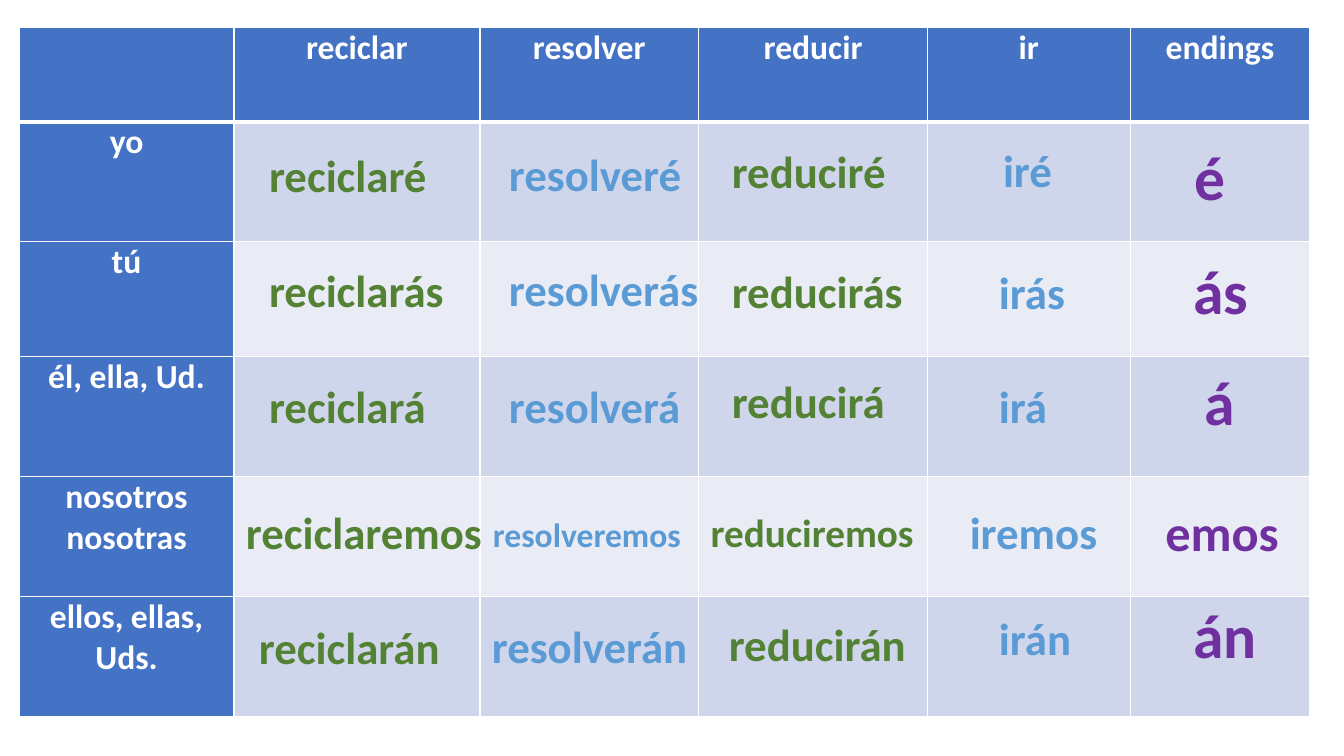
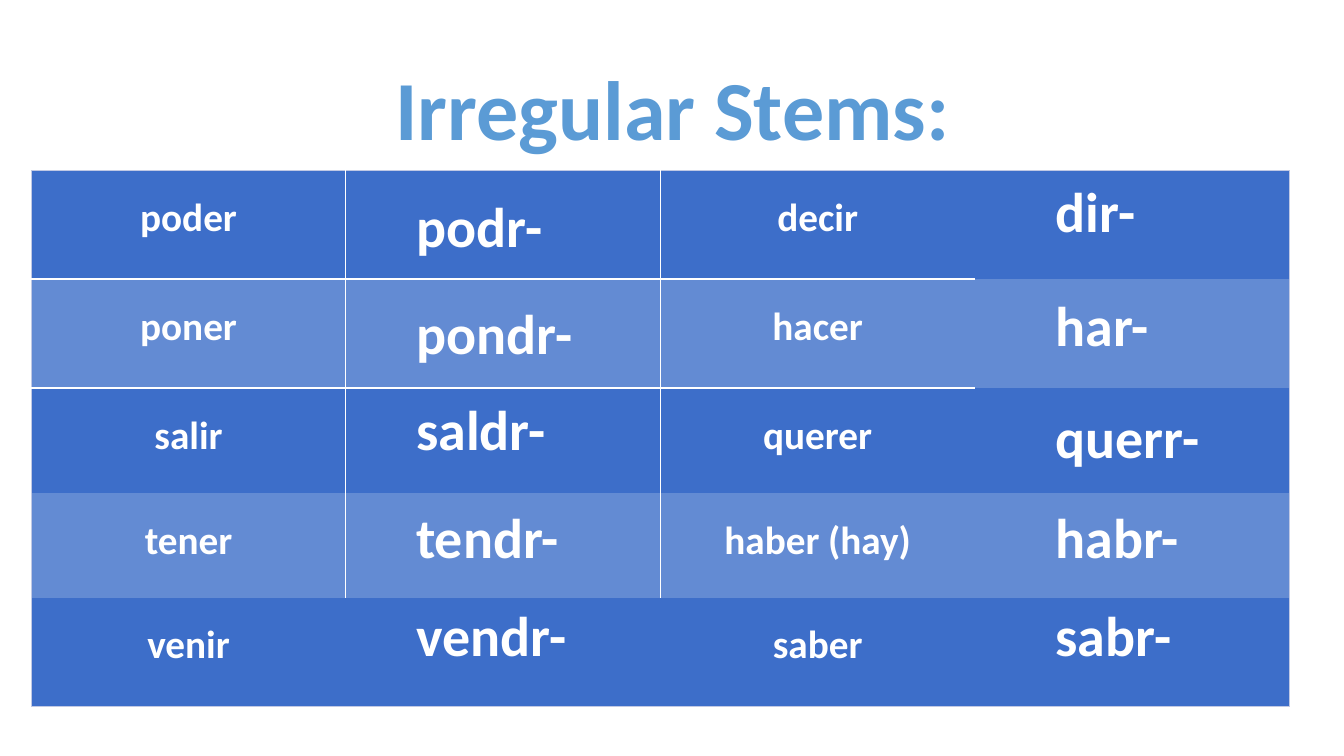
from lxml.etree import SubElement as Sub
from pptx import Presentation
from pptx.dml.color import RGBColor
from pptx.enum.text import MSO_AUTO_SIZE as Fit, MSO_ANCHOR as Anchor, PP_ALIGN as Align
from pptx.oxml.ns import qn
from pptx.util import Inches, Pt

# Shared look
FONT = "Calibri"
WHITE, BLUE, SKY = "FFFFFF", "4472C4", "5B9BD5"
GREEN, PURPLE = "548235", "7030A0"
PALE, LIGHT = "E9EBF5", "CFD5EA"
DEEP, MID, RIM = "3D6EC9", "638BD3", "C1C9E4"
PLAIN = "{2D5ABB26-0587-4C30-8999-92F81FD0307C}"  # table style without grid

# Slide 1: each verb column is colour, box width, (word, left, top, size)
HEADS = ["", "reciclar", "resolver", "reducir", "ir", "endings"]
PEOPLE = ["yo", "tú", "él, ella, Ud.", "nosotros\nnosotras", "ellos, ellas, Uds."]
FORMS = [
    (GREEN, 4, [("reciclaré", 2.57, 1.42, 32), ("reciclarás", 2.57, 2.56, 32),
                ("reciclará", 2.57, 3.71, 32), ("reciclaremos", 2.34, 4.96, 32),
                ("reciclarán", 2.47, 6.1, 32)]),
    (SKY, 4, [("resolveré", 4.95, 1.41, 32), ("resolverás", 4.95, 2.55, 32),
              ("resolverá", 4.95, 3.71, 32), ("resolveremos", 4.79, 5.05, 24),
              ("resolverán", 4.78, 6.09, 32)]),
    (GREEN, 4, [("reduciré", 7.16, 1.38, 32), ("reducirás", 7.16, 2.57, 32),
                ("reducirá", 7.16, 3.66, 32), ("reduciremos", 6.95, 4.99, 28),
                ("reducirán", 7.13, 6.07, 32)]),
    (SKY, 1.94, [("iré", 9.85, 1.37, 32), ("irás", 9.81, 2.58, 32),
                 ("irá", 9.81, 3.71, 32), ("iremos", 9.52, 4.96, 32),
                 ("irán", 9.81, 6.01, 32)]),
    (PURPLE, 1.4, [("é", 11.75, 1.33, 44), ("ás", 11.74, 2.46, 44),
                   ("á", 11.85, 3.56, 44), ("emos", 11.46, 4.92, 36),
                   ("án", 11.74, 5.87, 44)]),
]

# Slide 2: verbs in the table, stems as (word, top) at a shared left
VERBS = [("poder", "decir"), ("poner", "hacer"), ("salir", "querer"),
         ("tener", "haber (hay)"), ("venir", "saber")]
STEMS = [
    (4.03, [("podr-", 1.85), ("pondr-", 2.91), ("saldr-", 3.86),
            ("tendr-", 4.94), ("vendr-", 5.91)]),
    (10.37, [("dir-", 1.7), ("har-", 2.83), ("querr-", 3.94),
             ("habr-", 4.94), ("sabr-", 5.91)]),
]


def paint(color):
    return RGBColor.from_string(color)


def style(frame, size, color, align=None, gap=None):
    for par in frame.paragraphs:
        par.alignment = align
        par.line_spacing = gap
        for run in par.runs:
            font = run.font
            font.name, font.size, font.bold = FONT, Pt(size), True
            font.color.rgb = paint(color)


def add_word(slide, text, left, top, width, size, color):
    """Text box one line high."""
    high = round(size * 1.22 / 72 + 0.1, 2)
    box = slide.shapes.add_textbox(Inches(left), Inches(top), Inches(width), Inches(high))
    frame = box.text_frame
    frame.word_wrap, frame.auto_size = True, Fit.SHAPE_TO_FIT_TEXT
    frame.text = text
    style(frame, size, color)


def add_title(slide, text):
    box = slide.shapes.add_textbox(Inches(0.92), Inches(0.4), Inches(11.5), Inches(1.45))
    frame = box.text_frame
    frame.word_wrap, frame.vertical_anchor = True, Anchor.MIDDLE
    frame.text = text
    style(frame, 60, SKY, Align.CENTER, 0.9)


def add_edges(cell, edges):
    """Edges map a side to (colour, points)."""
    props = cell._tc.get_or_add_tcPr()
    for side in "LRTB":
        if side in edges:
            color, width = edges[side]
            line = Sub(props, qn("a:ln" + side), w=str(Pt(width)))
            Sub(Sub(line, qn("a:solidFill")), qn("a:srgbClr"), val=color)


def add_grid(slide, left, top, cols, rows, words, size, look, gap=None):
    """Look gives the fill and edges for a row and column."""
    table = slide.shapes.add_table(
        len(rows), len(cols), Inches(left), Inches(top),
        Inches(sum(cols)), Inches(sum(rows))).table
    table._tbl.tblPr.find(qn("a:tableStyleId")).text = PLAIN
    for col, width in zip(table.columns, cols):
        col.width = Inches(width)
    for r, high in enumerate(rows):
        table.rows[r].height = Inches(high)
        for c in range(len(cols)):
            cell = table.cell(r, c)
            cell.margin_left = cell.margin_right = Inches(0.07)
            cell.margin_top = cell.margin_bottom = 0
            fill, edges = look(r, c)
            add_edges(cell, edges)
            cell.fill.solid()
            cell.fill.fore_color.rgb = paint(fill)
            if words[r][c]:
                cell.text_frame.text = words[r][c]
                style(cell.text_frame, size, WHITE, Align.CENTER, gap)


def look_forms(r, c):
    edges = {side: (WHITE, 1) for side in "LRTB"}
    if r < 2:
        edges["B" if r == 0 else "T"] = (WHITE, 3)
    if r == 0 or c == 0:
        return BLUE, edges
    return (LIGHT if r % 2 else PALE), edges


def look_stems(r, c):
    rim, edges = (RIM, 0.5), {}
    # Outer rim
    if c == 0:
        edges["L"] = rim
    if c == 3:
        edges["R"] = rim
    if r == 0:
        edges["T"] = rim
    if r == 4:
        edges["B"] = rim
    # White rules beside the first column and under the first row
    if c < 2 and r < 4:
        edges["L" if c else "R"] = (WHITE, 1)
    if r < 2 and c < 3:
        edges["T" if r else "B"] = (WHITE, 1.5)
    return (MID if r % 2 else DEEP), edges


def add_forms(slide):
    words = [HEADS] + [[who] + [""] * 5 for who in PEOPLE]
    add_grid(slide, 0.19, 0.27, [2.13, 2.44, 2.17, 2.27, 2.01, 1.78],
             [0.94, 1.19, 1.14, 1.19, 1.19, 1.19], words, 24, look_forms)
    for color, width, forms in FORMS:
        for text, left, top, size in forms:
            add_word(slide, text, left, top, width, size, color)


def add_stems(slide):
    add_title(slide, "Irregular Stems:")
    words = [[one, "", two, ""] for one, two in VERBS]
    add_grid(slide, 0.31, 1.69, [3.12] * 4, [1.08, 1.08, 1.04, 1.04, 1.08],
             words, 28, look_stems, 1.5)
    for left, stems in STEMS:
        for text, top in stems:
            add_word(slide, text, left, top, 2.05, 40, WHITE)


def main():
    deck = Presentation()
    deck.slide_width, deck.slide_height = Inches(13.33), Inches(7.5)
    for build in (add_forms, add_stems):
        build(deck.slides.add_slide(deck.slide_layouts[6]))
    deck.save("out.pptx")


if __name__ == "__main__":
    main()
